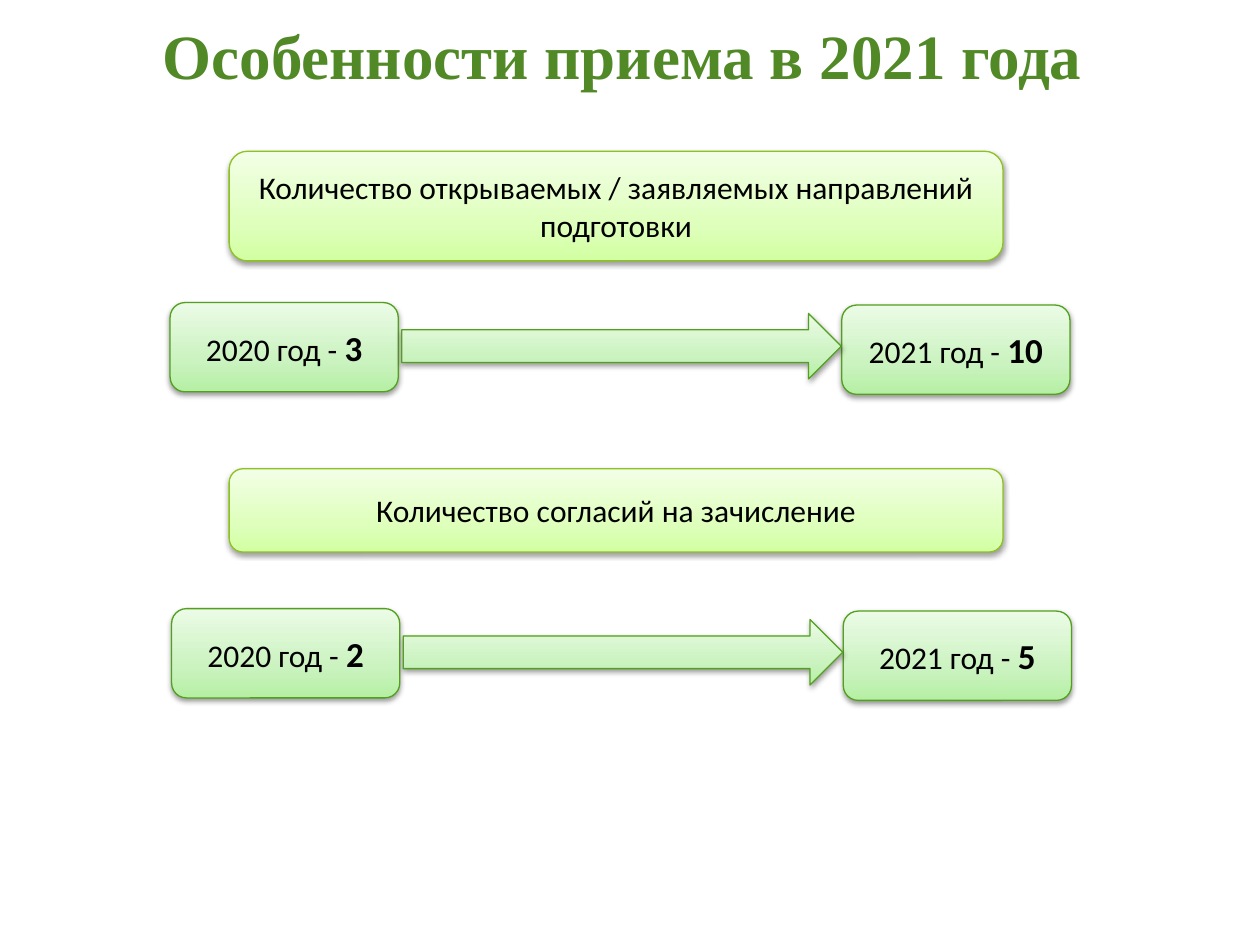
import copy

import lxml.etree
import pptx
import pptx.dml.color
import pptx.enum.shapes
import pptx.enum.text
import pptx.oxml.ns
import pptx.util

Cm = pptx.util.Cm
Pt = pptx.util.Pt
Shape = pptx.enum.shapes.MSO_SHAPE
Anchor = pptx.enum.text.MSO_ANCHOR
qn = pptx.oxml.ns.qn


def color(value):
    return pptx.dml.color.RGBColor.from_string(value)


def apply(target, values):
    for name, value in values.items():
        setattr(target, name, value)


class AdmissionSlide:
    HEADING = {"stops": ("D2FFA2", "DFFFBD", "F2FFE6"), "line": "8EC221"}
    YEAR = {"stops": ("B5EFA4", "CBF3C0", "EBFBE6"), "line": "52A01D"}
    TITLE_FONT = {"name": "Times New Roman", "size": Pt(36), "bold": True}
    BODY_FONT = {"name": "Calibri", "size": Pt(18), "bold": False}
    COUNT_FONT = {"name": "Calibri", "size": Pt(20), "bold": True}
    FRAME = {
        "word_wrap": True,
        "vertical_anchor": Anchor.MIDDLE,
        "margin_left": 0,
        "margin_right": 0,
        "margin_top": 0,
        "margin_bottom": 0,
    }
    TITLE_FRAME = {
        "word_wrap": False,
        "auto_size": pptx.enum.text.MSO_AUTO_SIZE.SHAPE_TO_FIT_TEXT,
        "vertical_anchor": Anchor.TOP,
    }

    def __init__(self, presentation):
        self.slide = presentation.slides.add_slide(presentation.slide_layouts[5])

    def add_text(self, frame, pieces, ink="000000"):
        paragraph = frame.paragraphs[0]
        paragraph.alignment = pptx.enum.text.PP_ALIGN.CENTER
        for text, font in pieces:
            run = paragraph.add_run()
            run.text = text
            apply(run.font, font)
            run.font.color.rgb = color(ink)

    def title(self, text, left, top, width, height):
        heading = self.slide.shapes.title
        apply(heading, {"left": Cm(left), "top": Cm(top),
                        "width": Cm(width), "height": Cm(height)})
        apply(heading.text_frame, self.TITLE_FRAME)
        self.add_text(heading.text_frame, [(text, self.TITLE_FONT)], "508926")

    def gradient(self, shape, stops):
        shape.fill.gradient()
        shape.fill.gradient_angle = 90
        stop_list = shape.element.spPr.find(".//" + qn("a:gsLst"))
        stop_list.insert(1, copy.deepcopy(stop_list[0]))
        for stop, position, value in zip(shape.fill.gradient_stops, (0, 0.35, 1), stops):
            stop.position = position
            stop.color.rgb = color(value)

    def shadow(self, shape):
        shape.shadow.inherit = False
        effects = shape.element.spPr.find(qn("a:effectLst"))
        outer = lxml.etree.SubElement(effects, qn("a:outerShdw"), blurRad="40000",
                                      dist="20000", dir="5400000", rotWithShape="0")
        black = lxml.etree.SubElement(outer, qn("a:srgbClr"), val="000000")
        lxml.etree.SubElement(black, qn("a:alpha"), val="38000")

    def block(self, shapes, kind, look, left, top, width, height, pieces=()):
        shape = shapes.add_shape(kind, Cm(left), Cm(top), Cm(width), Cm(height))
        self.gradient(shape, look["stops"])
        shape.line.color.rgb = color(look["line"])
        shape.line.width = Pt(0.75)
        self.shadow(shape)
        apply(shape.text_frame, self.FRAME)
        self.add_text(shape.text_frame, pieces)

    def heading(self, text, top, height):
        self.block(self.slide.shapes, Shape.ROUNDED_RECTANGLE, self.HEADING,
                   4.62, top, 15.6, height, [(text, self.BODY_FONT)])

    def comparison(self, left, top, before, after):
        members = self.slide.shapes.add_group_shape().shapes
        years = (("2020", before, 0, 0), ("2021", after, 13.54, 0.05))
        for year, count, across, down in years:
            self.block(members, Shape.ROUNDED_RECTANGLE, self.YEAR,
                       left + across, top + down, 4.6, 1.8,
                       [(f"{year} год - ", self.BODY_FONT), (count, self.COUNT_FONT)])
        self.block(members, Shape.RIGHT_ARROW, self.YEAR,
                   left + 4.67, top + 0.22, 8.86, 1.32)


def main():
    presentation = pptx.Presentation()
    presentation.slide_width = Cm(25.4)
    presentation.slide_height = Cm(19.05)
    admission = AdmissionSlide(presentation)
    admission.title("Особенности приема в 2021 года", 3.02, 0.2, 19.05, 1.8)
    admission.heading("Количество открываемых / заявляемых направлений подготовки", 3.05, 2.21)
    admission.heading("Количество согласий на зачисление", 9.45, 1.68)
    admission.comparison(3.43, 6.1, "3", "10")
    admission.comparison(3.46, 12.27, "2", "5")
    presentation.save("out.pptx")


if __name__ == "__main__":
    main()
